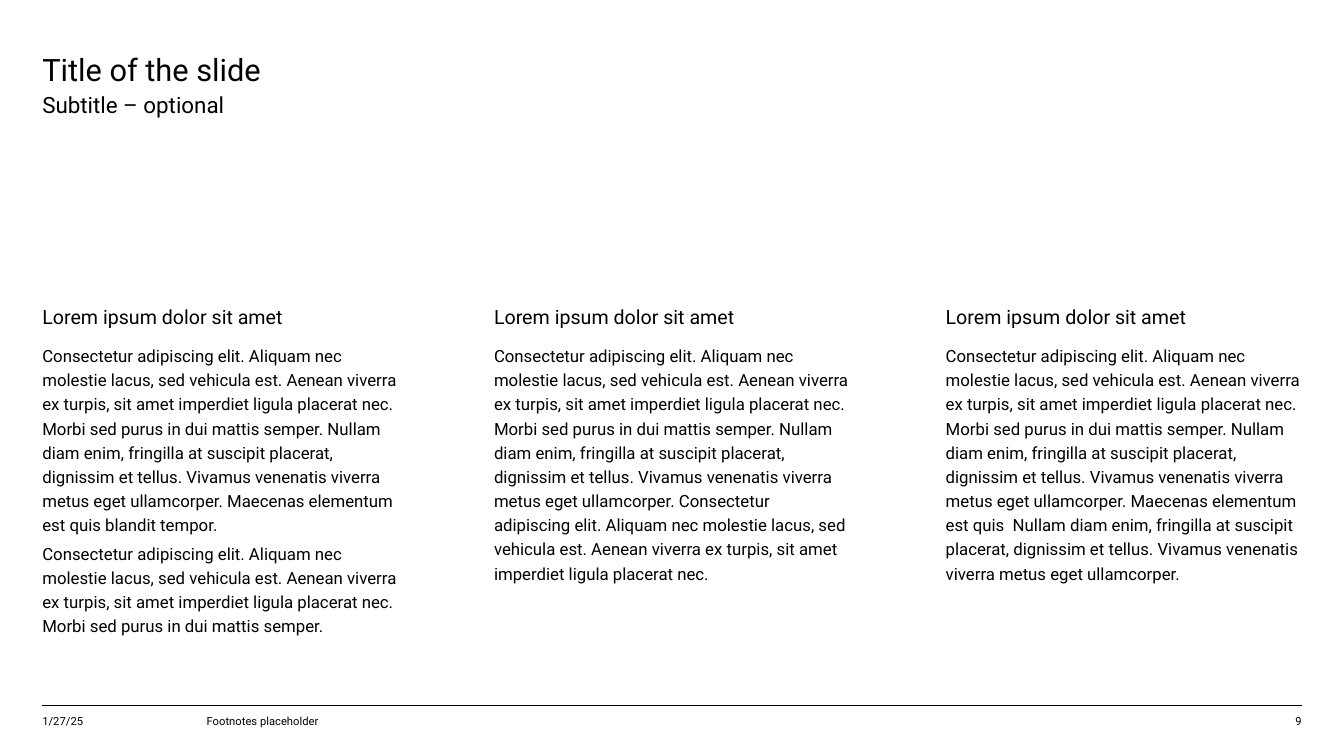
from dataclasses import dataclass

from lxml import etree
from pptx import Presentation
from pptx.dml.color import RGBColor
from pptx.enum.shapes import MSO_CONNECTOR
from pptx.enum.text import MSO_ANCHOR, PP_ALIGN
from pptx.oxml.ns import qn
from pptx.util import Inches, Pt

LEFT, RIGHT = PP_ALIGN.LEFT, PP_ALIGN.RIGHT
TOP, BOTTOM = MSO_ANCHOR.TOP, MSO_ANCHOR.BOTTOM
STRAIGHT = MSO_CONNECTOR.STRAIGHT


@dataclass(frozen=True)
class Theme:
    font: str = "Roboto"
    ink: RGBColor = RGBColor(0, 0, 0)
    paper: RGBColor = RGBColor(255, 255, 255)
    title: int = 22
    subtitle: int = 16
    heading: int = 14
    body: int = 12
    footer: int = 8


class SlideBuilder:
    def __init__(self, slide, theme):
        self.s = slide
        self.theme = theme
        fill = slide.background.fill
        fill.solid()
        fill.fore_color.rgb = theme.paper

    def text(self, x, y, w, h, paragraphs, size, align=LEFT, anchor=TOP, spacing=None):
        sp = self.s.shapes.add_textbox(Inches(x), Inches(y), Inches(w), Inches(h))
        tf = sp.text_frame
        tf.word_wrap = True
        tf.vertical_anchor = anchor
        tf.margin_left = tf.margin_right = tf.margin_top = tf.margin_bottom = 0
        for i, content in enumerate(paragraphs):
            p = tf.add_paragraph() if i else tf.paragraphs[0]
            p.text = content
            p.alignment = align
            p.line_spacing = spacing
            if i:
                p.space_before = Pt(3)
            p.font.name = self.theme.font
            p.font.size = Pt(size)
            p.font.color.rgb = self.theme.ink
        return sp

    def heading(self, x, y, w, h, content):
        sp = self.text(x, y, w, h, [content], self.theme.heading,
                       anchor=BOTTOM, spacing=Pt(16))
        sp.text_frame.margin_bottom = Inches(0.08)
        sp.fill.solid()
        sp.fill.fore_color.rgb = self.theme.paper

    def rule(self, x1, x2, y):
        line = self.s.shapes.add_connector(
            STRAIGHT, Inches(x1), Inches(y), Inches(x2), Inches(y))
        line.line.color.rgb = self.theme.ink
        line.line.width = Pt(0.75)
        etree.SubElement(line._element.spPr, qn("a:effectLst"))


MARGIN, RIGHT_EDGE = 0.42, 12.91
COLUMN_W, COLUMN_STEP = 3.53, 4.48
FOOTER_Y, FOOTER_H = 7.09, 0.2

# Sentences shared by the columns
OPENING = ("Consectetur adipiscing elit. Aliquam nec molestie lacus, sed vehicula est. "
           "Aenean viverra ex turpis, sit amet imperdiet ligula placerat nec.")
MORBI = "Morbi sed purus in dui mattis semper."
NULLAM = ("Nullam diam enim, fringilla at suscipit placerat, dignissim et tellus. "
          "Vivamus venenatis viverra metus eget ullamcorper.")
COMMON = f"{OPENING} {MORBI} {NULLAM}"
MAECENAS = "Maecenas elementum est quis"

COLUMNS = [
    [f"{COMMON} {MAECENAS} blandit tempor.", f"{OPENING} {MORBI}"],
    [f"{COMMON} {OPENING}"],
    [f"{COMMON} {MAECENAS}  {NULLAM}"],
]


def main():
    prs = Presentation()
    prs.slide_width, prs.slide_height = Inches(13.33), Inches(7.5)
    theme = Theme()
    s = SlideBuilder(prs.slides.add_slide(prs.slide_layouts[6]), theme)

    # Title and subtitle
    s.text(MARGIN, 0.5, 10.86, 0.37, ["Title of the slide"], theme.title)
    s.text(MARGIN, 0.9, 10.86, 0.3, ["Subtitle – optional"], theme.subtitle)

    # Three text columns
    for i, paragraphs in enumerate(COLUMNS):
        x = MARGIN + i * COLUMN_STEP
        s.heading(x, 3.06, COLUMN_W, 0.28, "Lorem ipsum dolor sit amet")
        s.text(x, 3.39, COLUMN_W, 3.25, paragraphs, theme.body, spacing=1.2)

    # Footer
    s.rule(MARGIN, RIGHT_EDGE, 7)
    for x, w, content, align in [
        (MARGIN, 1.1, "1/27/25", LEFT),
        (2.05, 9.6, "Footnotes placeholder", LEFT),
        (12.31, 0.6, "9", RIGHT),
    ]:
        s.text(x, FOOTER_Y, w, FOOTER_H, [content], theme.footer, align)

    prs.save("out.pptx")


if __name__ == "__main__":
    main()
